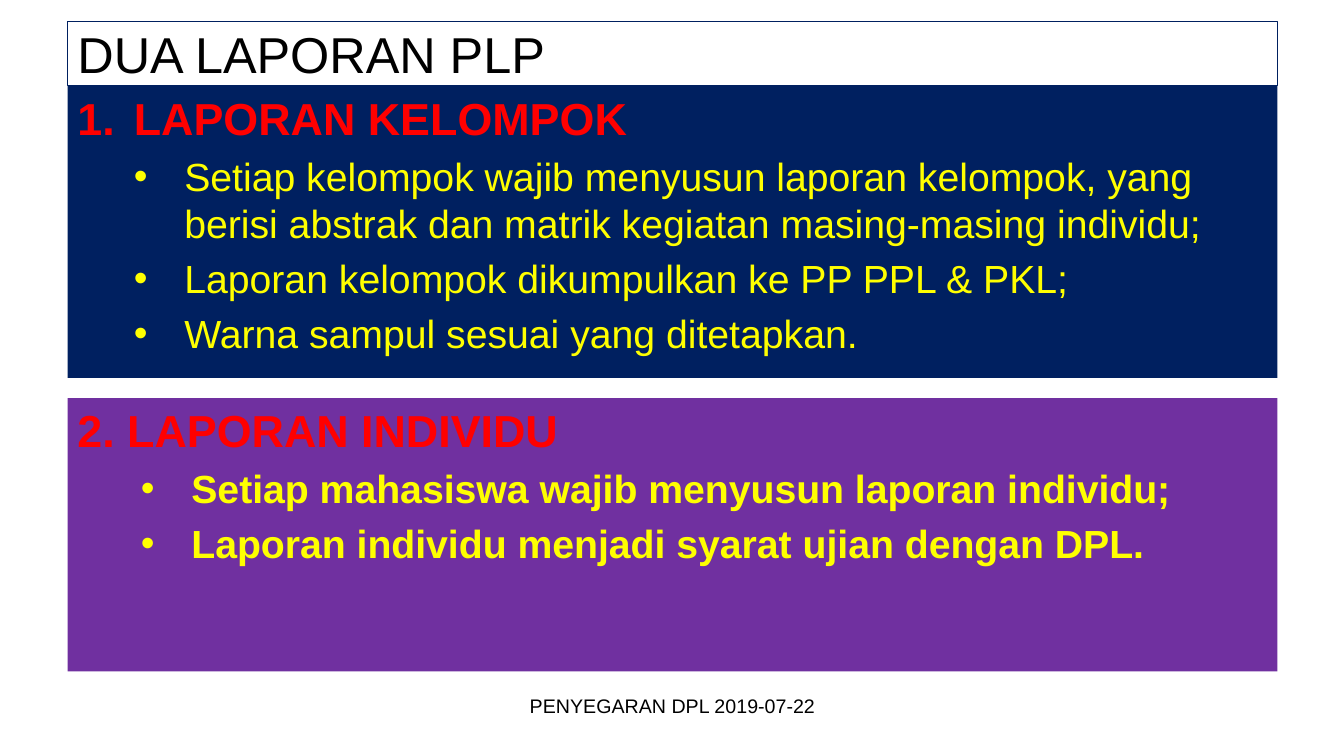
from dataclasses import dataclass

from lxml import etree
from pptx import Presentation
from pptx.dml.color import RGBColor
from pptx.enum.shapes import MSO_SHAPE
from pptx.enum.text import MSO_ANCHOR, PP_ALIGN
from pptx.oxml.ns import qn
from pptx.util import Emu, Pt

PX = 9144


@dataclass(frozen=True)
class Theme:
    """Colours, font and type sizes of the slide."""
    font: str = "Arial"
    black: str = "000000"
    navy: str = "002060"
    purple: str = "7030A0"
    red: str = "FF0000"
    yellow: str = "FFFF00"
    title: int = 36
    heading: int = 32
    item: int = 28
    footer: int = 14


T = Theme()


def px(n):
    """Turn whole pixels into EMU."""
    return Emu(n * PX)


def rgb(code):
    """Turn a hex code into a colour."""
    return RGBColor.from_string(code)


def add_panel(slide, box, fill=None, line=None):
    """Add a rectangle and return its text frame."""
    sp = slide.shapes.add_shape(MSO_SHAPE.RECTANGLE, *map(px, box))
    sp.shadow.inherit = False
    if fill:
        sp.fill.solid()
        sp.fill.fore_color.rgb = rgb(fill)
    else:
        sp.fill.background()
    if line:
        sp.line.color.rgb = rgb(line)
        sp.line.width = Pt(0.75)
    else:
        sp.line.fill.background()
    tf = sp.text_frame
    tf.word_wrap = True
    tf.vertical_anchor = MSO_ANCHOR.TOP
    return tf


def add_text(tf, text, *, size, color, bold=False, align=PP_ALIGN.LEFT,
             left=0, hang=0, bullet=None, number=None):
    """Write one paragraph into a text frame with its format."""
    first = not tf.paragraphs[0].runs
    p = tf.paragraphs[0] if first else tf.add_paragraph()
    p.alignment = align
    if not first:
        p.space_before = Pt(round(size * 0.2, 1))
    pPr = p._p.get_or_add_pPr()
    pPr.set("marL", str(px(left)))
    pPr.set("indent", str(px(-hang)))
    if bullet:
        etree.SubElement(pPr, qn("a:buFont"), typeface=T.font)
        etree.SubElement(pPr, qn("a:buChar"), char=bullet)
    elif number:
        etree.SubElement(pPr, qn("a:buFont"), typeface=T.font)
        etree.SubElement(pPr, qn("a:buAutoNum"), type=number)
    r = p.add_run()
    r.text = text
    r.font.name = T.font
    r.font.size = Pt(size)
    r.font.bold = bold
    r.font.color.rgb = rgb(color)


def add_report(slide, box, fill, heading, items, *, item_left,
               items_bold=False, **heading_format):
    """Add a filled panel with a heading and its bulleted items."""
    tf = add_panel(slide, box, fill=fill)
    add_text(tf, heading, size=T.heading, color=T.red, bold=True, **heading_format)
    for item in items:
        add_text(tf, item, size=T.item, color=T.yellow, bold=items_bold,
                 left=item_left, hang=50, bullet="•")


def add_title(slide, box, text):
    """Add the outlined title bar."""
    tf = add_panel(slide, box, line=T.navy)
    tf.vertical_anchor = MSO_ANCHOR.MIDDLE
    add_text(tf, text, size=T.title, color=T.black)


def add_footer(slide, box, text):
    """Add the centred footer line."""
    tf = slide.shapes.add_textbox(*map(px, box)).text_frame
    tf.word_wrap = True
    add_text(tf, text, size=T.footer, color=T.black, align=PP_ALIGN.CENTER)


def main():
    """Build the slide and save it."""
    prs = Presentation()
    prs.slide_width, prs.slide_height = px(1333), px(750)
    slide = prs.slides.add_slide(prs.slide_layouts[6])
    left, width = 67, 1200
    add_title(slide, (left, 21, width, 64), "DUA LAPORAN PLP")
    add_report(slide, (left, 85, width, 290), T.navy, "LAPORAN KELOMPOK", [
        "Setiap kelompok wajib menyusun laporan kelompok, yang berisi abstrak "
        "dan matrik kegiatan masing-masing individu;",
        "Laporan kelompok dikumpulkan ke PP PPL & PKL;",
        "Warna sampul sesuai yang ditetapkan.",
    ], item_left=106, left=56, hang=56, number="arabicPeriod")
    add_footer(slide, (456, 683, 422, 52), "PENYEGARAN DPL 2019-07-22")
    add_report(slide, (left, 395, width, 271), T.purple, "2. LAPORAN INDIVIDU", [
        "Setiap mahasiswa wajib menyusun laporan individu;",
        "Laporan individu menjadi syarat ujian dengan DPL.",
    ], item_left=113, items_bold=True)
    prs.save("out.pptx")


if __name__ == "__main__":
    main()
